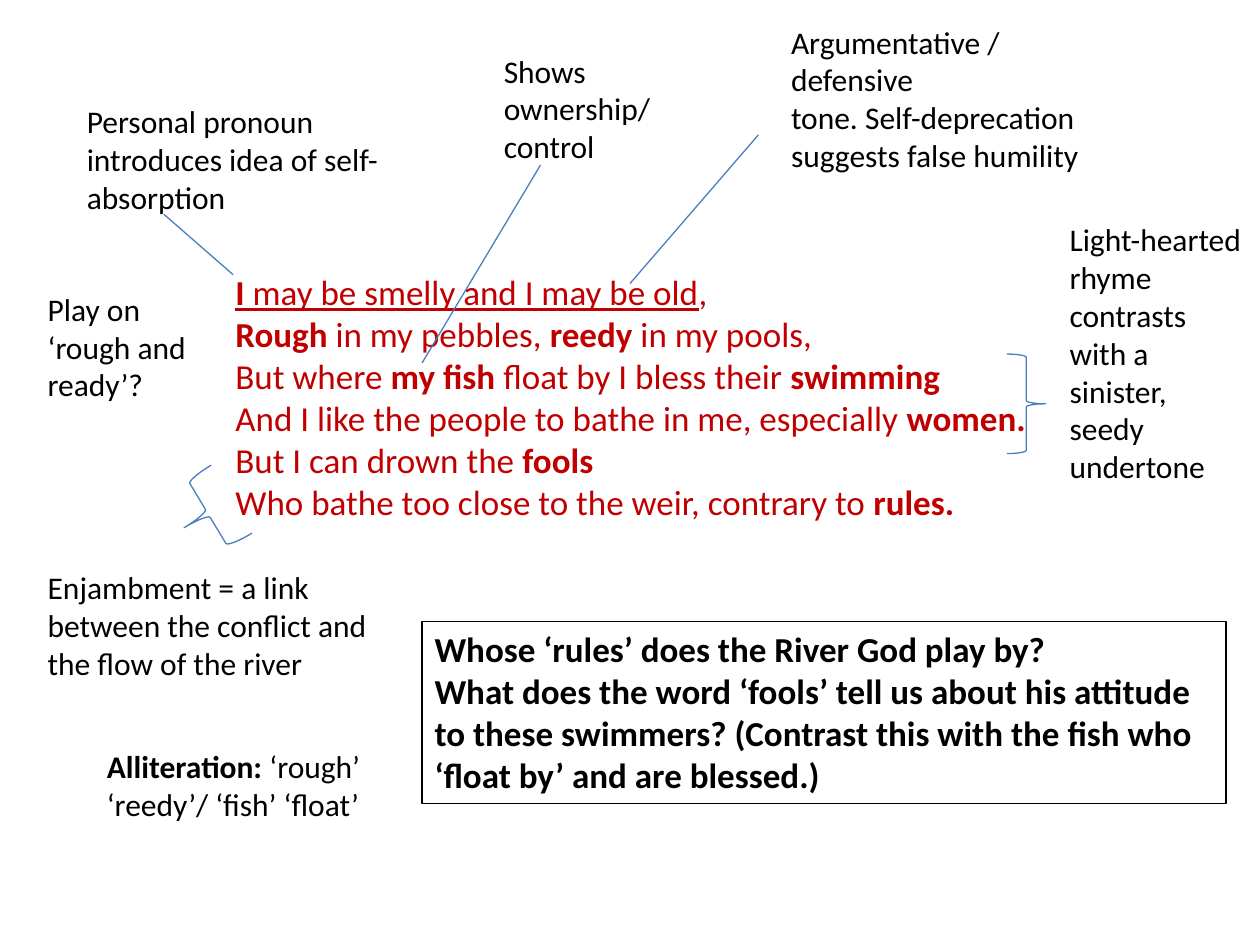
import pptx
import pptx.util
import pptx.dml.color
import pptx.enum.shapes
import pptx.enum.text
import pptx.oxml.ns
from lxml import etree

# Positions are columns and rows of a 100 x 75 grid over the slide.
COLUMNS, ROWS = 100, 75
WIDTH, HEIGHT = pptx.util.Inches(10), pptx.util.Inches(7.5)
BLACK, POEM_RED, MARK_BLUE = "000000", "C00000", "4B7EBC"
BRACE = pptx.enum.shapes.MSO_SHAPE

# A line is a list of (text, style); style letters: b bold, u underlined.
POEM = [
    [("I", "bu"), (" may be smelly and I may be old", "u"), (",", "")],
    [("Rough", "b"), (" in my pebbles, ", ""), ("reedy", "b"), (" in my pools,", "")],
    [("But where ", ""), ("my fish ", "b"), ("float by I bless their ", ""), ("swimming", "b")],
    [("And I like the people to bathe in me, especially ", ""), ("women.", "b")],
    [("But I can drown the ", ""), ("fools", "b")],
    [("Who bathe too close to the weir, contrary to ", ""), ("rules.", "b")],
]
QUESTIONS = [
    [("Whose ‘rules’ does the River God play by?", "b")],
    [("What does the word ‘fools’ tell us about his attitude to these swimmers? "
      "(Contrast this with the fish who ‘float by’ and are blessed.)", "b")],
]
NOTES = [
    ((61.8, 1.3, 26, 13.1), [[("Argumentative / defensive", "")],
                             [("tone. Self-deprecation", "")],
                             [("suggests false humility", "")]]),
    ((2.8, 22.5, 14.2, 10.1), [[("Play on ‘rough and ready’?", "")]]),
    ((5.9, 7.6, 29.1, 10.1),
     [[("Personal pronoun introduces idea of self-absorption", "")]]),
    ((39, 3.6, 15.7, 10.1), [[("Shows ownership/ control", "")]]),
    ((83.9, 17, 16.1, 22.2), [[("Light-hearted rhyme", "")],
                              [("contrasts with a sinister,", "")],
                              [("seedy undertone", "")]]),
    ((2.8, 44.6, 27.6, 10.1),
     [[("Enjambment = a link between the conflict and the flow of the river", "")]]),
    ((7.5, 58.8, 22.8, 7.1),
     [[("Alliteration: ", "b"), ("‘rough’ ‘reedy’/ ‘fish’ ‘float’", "")]]),
]
POINTERS = [
    ((50, 22.5), (60.2, 10.7)),
    ((13, 17), (18.5, 21.8)),
    ((42.9, 13.1), (33.5, 28.8)),
]
BRACES = [
    (BRACE.RIGHT_BRACE, (79.9, 28.1, 3.1, 7.9), 0),
    (BRACE.LEFT_BRACE, (14.3, 37.6, 4.4, 6.3), 329),
]


def rgb(value):
    return pptx.dml.color.RGBColor.from_string(value)


def grid(*lengths):
    """Turn alternating columns and rows into slide lengths."""
    cells = (WIDTH / COLUMNS, HEIGHT / ROWS)
    return [round(length * cells[i % 2]) for i, length in enumerate(lengths)]


def outline(line, color):
    line.color.rgb = rgb(color)
    line.width = pptx.util.Pt(0.75)


def write(frame, lines, size, color):
    frame.word_wrap = True
    frame.auto_size = pptx.enum.text.MSO_AUTO_SIZE.SHAPE_TO_FIT_TEXT
    frame.vertical_anchor = pptx.enum.text.MSO_ANCHOR.TOP
    for number, line in enumerate(lines):
        paragraph = frame.add_paragraph() if number else frame.paragraphs[0]
        paragraph.alignment = pptx.enum.text.PP_ALIGN.LEFT
        paragraph.font.name = "Calibri"
        paragraph.font.size = pptx.util.Pt(size)
        paragraph.font.color.rgb = rgb(color)
        for text, style in line:
            run = paragraph.add_run()
            run.text = text
            if "b" in style:
                run.font.bold = True
            if "u" in style:
                run.font.underline = True


def add_text(slide, box, lines, size=18, color=BLACK):
    write(slide.shapes.add_textbox(*grid(*box)).text_frame, lines, size, color)


def add_unfilled(slide, kind, box, color):
    shape = slide.shapes.add_shape(kind, *grid(*box))
    shape.shadow.inherit = False
    shape.fill.background()
    outline(shape.line, color)
    return shape


def add_questions(slide, box):
    panel = add_unfilled(slide, BRACE.RECTANGLE, box, BLACK)
    write(panel.text_frame, QUESTIONS, 20, BLACK)


def add_pointer(slide, start, end):
    pointer = slide.shapes.add_connector(
        pptx.enum.shapes.MSO_CONNECTOR.STRAIGHT, *grid(*start, *end))
    outline(pointer.line, MARK_BLUE)
    etree.SubElement(pointer._element.spPr, pptx.oxml.ns.qn("a:effectLst"))


def main():
    deck = pptx.Presentation()
    deck.slide_width, deck.slide_height = WIDTH, HEIGHT
    slide = deck.slides.add_slide(deck.slide_layouts[6])
    add_text(slide, (17.7, 21, 65.4, 24.2), POEM, 20, POEM_RED)
    for box, lines in NOTES:
        add_text(slide, box, lines)
    for start, end in POINTERS:
        add_pointer(slide, start, end)
    for kind, box, turn in BRACES:
        add_unfilled(slide, kind, box, MARK_BLUE).rotation = turn
    add_questions(slide, (33.5, 49.3, 63.8, 14.5))
    deck.save("out.pptx")


if __name__ == "__main__":
    main()
